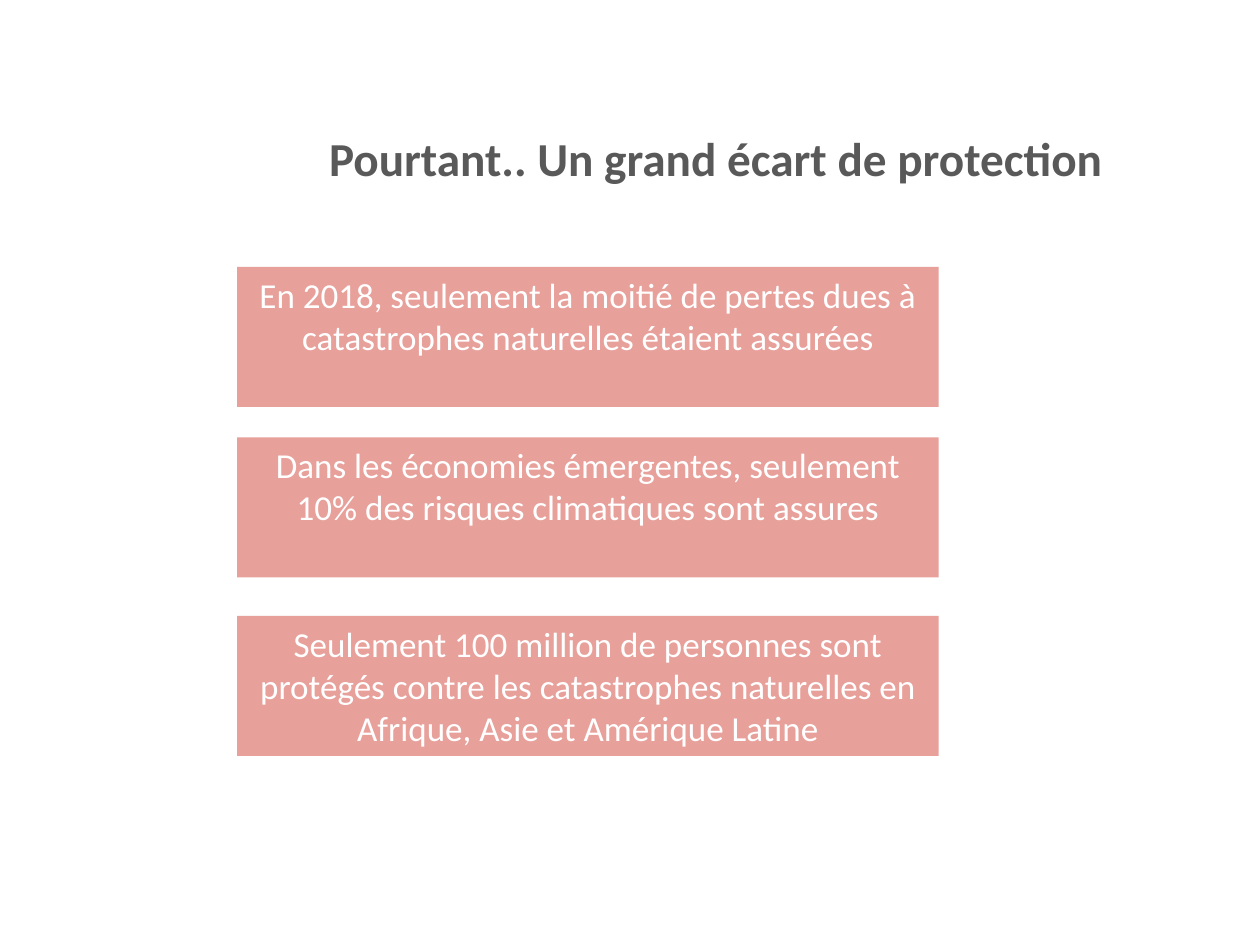
from typing import NamedTuple

import pptx
import pptx.dml.color
import pptx.enum.shapes
import pptx.enum.text
import pptx.oxml
import pptx.oxml.ns
import pptx.util
from pptx.enum.text import MSO_ANCHOR, PP_ALIGN
from pptx.util import Pt

FONT = "Calibri"
BOX_LEFT, BOX_WIDTH, BOX_HEIGHT = 135.5, 401, 80
BOX_FILL, BOX_OPACITY = "D75850", 57


class Fact(NamedTuple):
    top: float
    text: str
    space_after: float


FACTS = [
    Fact(152.5, "En 2018, seulement la moitié de pertes dues à catastrophes naturelles étaient assurées", 0),
    Fact(250, "Dans les économies émergentes, seulement 10% des risques climatiques sont assures", 9),
    Fact(352, "Seulement 100 million de personnes sont protégés contre les catastrophes "
              "naturelles en Afrique, Asie et Amérique Latine", 9),
]


def color(hex_value: str) -> pptx.dml.color.RGBColor:
    return pptx.dml.color.RGBColor.from_string(hex_value)


def write_text(shape, text: str, *, size: float, hex_color: str, align: PP_ALIGN,
               anchor: MSO_ANCHOR, bold: bool = False, space_after: float = 0) -> None:
    frame = shape.text_frame
    frame.word_wrap = True
    frame.vertical_anchor = anchor
    paragraph = frame.paragraphs[0]
    paragraph.alignment = align
    paragraph.space_after = Pt(space_after)
    run = paragraph.add_run()
    run.text = text
    run.font.name = FONT
    run.font.size = Pt(size)
    run.font.bold = bold
    run.font.color.rgb = color(hex_color)


def set_opacity(shape, percent: int) -> None:
    solid = shape.fill._xPr.find(pptx.oxml.ns.qn("a:solidFill"))
    alpha = pptx.oxml.parse_xml(
        f'<a:alpha {pptx.oxml.ns.nsdecls("a")} val="{percent * 1000}"/>')
    solid[0].append(alpha)


def add_title(slide, text: str) -> None:
    box = slide.shapes.add_textbox(Pt(157), Pt(56), Pt(486), Pt(68))
    write_text(box, text, size=27, hex_color="595959", bold=True,
               align=PP_ALIGN.RIGHT, anchor=MSO_ANCHOR.MIDDLE)


def add_fact(slide, fact: Fact) -> None:
    box = slide.shapes.add_shape(
        pptx.enum.shapes.MSO_SHAPE.RECTANGLE,
        Pt(BOX_LEFT), Pt(fact.top), Pt(BOX_WIDTH), Pt(BOX_HEIGHT))
    box.shadow.inherit = False
    box.fill.solid()
    box.fill.fore_color.rgb = color(BOX_FILL)
    set_opacity(box, BOX_OPACITY)
    box.line.fill.background()
    write_text(box, fact.text, size=20, hex_color="FFFFFF", align=PP_ALIGN.CENTER,
               anchor=MSO_ANCHOR.TOP, space_after=fact.space_after)


def main() -> None:
    presentation = pptx.Presentation()
    presentation.slide_width, presentation.slide_height = Pt(720), Pt(540)
    slide = presentation.slides.add_slide(presentation.slide_layouts[6])
    add_title(slide, "Pourtant.. Un grand écart de protection ")
    for fact in FACTS:
        add_fact(slide, fact)
    presentation.save("out.pptx")


if __name__ == "__main__":
    main()
